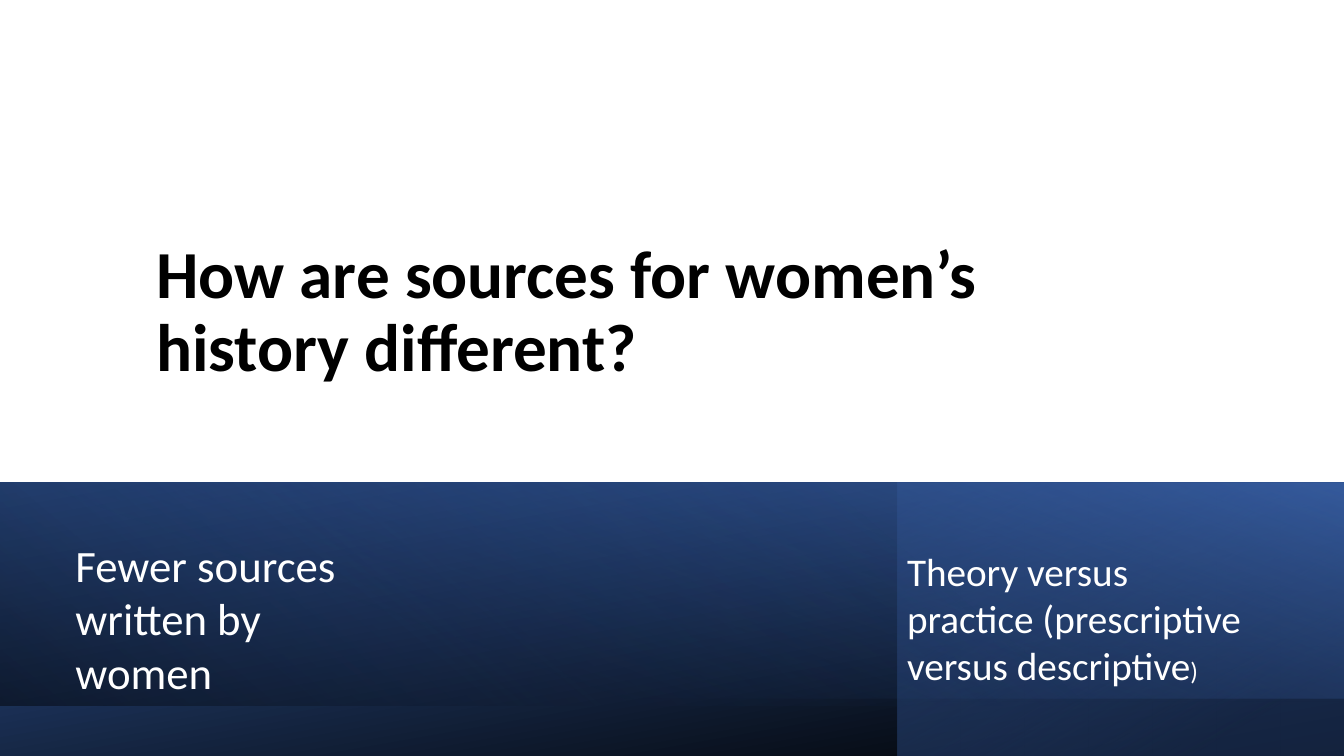
from dataclasses import dataclass

from lxml import etree
from pptx import Presentation
from pptx.dml.color import RGBColor
from pptx.enum import shapes, text
from pptx.oxml.ns import qn
from pptx.util import Pt


@dataclass(frozen=True)
class Theme:
    font: str = "Calibri"
    black: str = "000000"
    white: str = "FFFFFF"
    navy: str = "203864"
    blue: str = "2F5597"
    bright: str = "4472C4"
    title_size: int = 48
    left_size: int = 32
    right_size: int = 28
    small_size: int = 18


theme = Theme()
WIDTH, HEIGHT = 960, 540
BAND_TOP = 344.4
RIGHT_LEFT = 640.8

TITLE = "How are sources for women’s history different?"
TITLE_BOX = (104.4, 90, 709.9, 189.4)

# Box, rotation, mirrored, clockwise gradient angle, stops (position %, colour, opacity %)
BAND_LAYERS = [
    ((0, BAND_TOP, WIDTH, HEIGHT - BAND_TOP), 180, False, 260,
     [(0, theme.blue, 100), (100, theme.black, 100)]),
    ((RIGHT_LEFT, BAND_TOP, WIDTH - RIGHT_LEFT, HEIGHT - BAND_TOP), 180, True, 300,
     [(4, theme.bright, 21), (83, theme.navy, 61)]),
    ((0, BAND_TOP, WIDTH, 154.4), 180, False, 110,
     [(32, theme.navy, 0), (100, theme.bright, 55)]),
    ((0, BAND_TOP, WIDTH, 159.4), 0, False, 130,
     [(32, theme.navy, 0), (100, theme.black, 45)]),
]

# Box, runs (wording, size)
NOTES = [
    ((46.8, 380.2, 233.3, 123.8),
     [("Fewer sources written by women", theme.left_size)]),
    ((RIGHT_LEFT, 387.4, 267.1, 108.7),
     [("Theory versus practice (prescriptive versus descriptive", theme.right_size),
      (")", theme.small_size)]),
]


def points(box):
    return [Pt(length) for length in box]


def format_run(run, size, color, bold=False):
    run.font.name = theme.font
    run.font.size = Pt(size)
    run.font.bold = bold
    run.font.color.rgb = RGBColor.from_string(color)


def add_title(slide):
    title = slide.shapes.title
    title.left, title.top, title.width, title.height = points(TITLE_BOX)
    frame = title.text_frame
    frame.text = TITLE
    frame.word_wrap = True
    frame.auto_size = text.MSO_AUTO_SIZE.NONE
    frame.vertical_anchor = text.MSO_ANCHOR.BOTTOM
    paragraph = frame.paragraphs[0]
    paragraph.alignment = text.PP_ALIGN.LEFT
    paragraph.line_spacing = 0.9
    paragraph.space_after = Pt(6)
    format_run(paragraph.runs[0], theme.title_size, theme.black, bold=True)


def add_band_layer(slide, box, rotation, mirrored, angle, stops):
    shape = slide.shapes.add_shape(shapes.MSO_SHAPE.RECTANGLE, *points(box))
    shape.shadow.inherit = False
    shape.rotation = rotation
    shape.line.fill.background()
    properties = shape._element.spPr
    if mirrored:
        properties.find(qn("a:xfrm")).set("flipH", "1")
    shape.fill.gradient()
    shape.fill.gradient_angle = 360 - angle
    for stop, (position, color, _) in zip(shape.fill.gradient_stops, stops):
        stop.position = position / 100
        stop.color.rgb = RGBColor.from_string(color)
    for element, (_, _, opacity) in zip(properties.iter(qn("a:srgbClr")), stops):
        if opacity < 100:
            etree.SubElement(element, qn("a:alpha")).set("val", str(opacity * 1000))


def add_note(slide, box, runs):
    frame = slide.shapes.add_textbox(*points(box)).text_frame
    frame.word_wrap = True
    frame.auto_size = text.MSO_AUTO_SIZE.SHAPE_TO_FIT_TEXT
    for wording, size in runs:
        run = frame.paragraphs[0].add_run()
        run.text = wording
        format_run(run, size, theme.white)


def main():
    presentation = Presentation()
    presentation.slide_width, presentation.slide_height = Pt(WIDTH), Pt(HEIGHT)
    slide = presentation.slides.add_slide(presentation.slide_layouts[5])
    add_title(slide)
    for layer in BAND_LAYERS:
        add_band_layer(slide, *layer)
    for note in NOTES:
        add_note(slide, *note)
    presentation.save("out.pptx")


if __name__ == "__main__":
    main()
